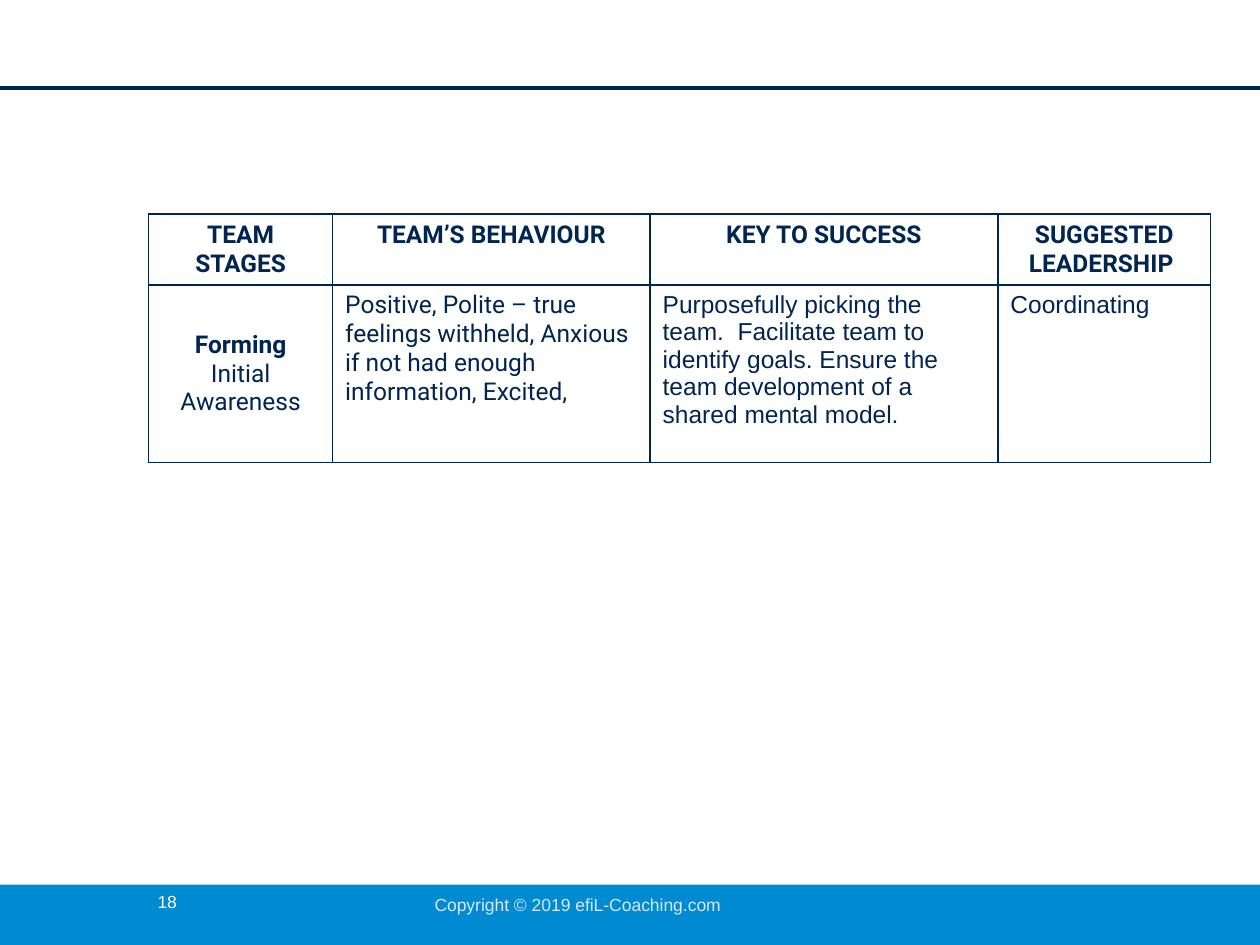
from lxml import etree
from pptx import Presentation
from pptx.dml.color import RGBColor
from pptx.enum import shapes, text
from pptx.oxml import ns
from pptx.util import Inches, Pt

COLORS = {"navy": "002551", "blue": "008BD0", "pale": "D4E8FF", "white": "FFFFFF"}
HEADS = ["TEAM STAGES", "TEAM’S BEHAVIOUR", "KEY TO SUCCESS", "SUGGESTED LEADERSHIP "]
STAGE = [("Forming", True), ("Initial Awareness", False)]
TRAITS = ("Positive, Polite – true feelings withheld, Anxious if not had enough "
          "information, Excited,")
KEYS = ("Purposefully picking the team.  Facilitate team to identify goals. "
        "Ensure the team development of a shared mental model.")
WIDTHS = [1.46, 2.52, 2.76, 1.69]
HEIGHTS = [0.56, 1.41]


def rgb(name):
    return RGBColor.from_string(COLORS[name])


def add_run(para, words, size, color, face="Arial", bold=False):
    run = para.add_run()
    run.text = words
    font = run.font
    font.size, font.name, font.bold = Pt(size), face, bold
    font.color.rgb = rgb(color)


def add_band(slide):
    band = slide.shapes.add_shape(shapes.MSO_SHAPE.RECTANGLE, Inches(0), Inches(7.02),
                                  Inches(10), Inches(0.48))
    band.shadow.inherit = False
    band.fill.solid()
    band.fill.fore_color.rgb = rgb("blue")
    band.line.fill.background()


def add_rule(slide):
    rule = slide.shapes.add_connector(shapes.MSO_CONNECTOR.STRAIGHT, Inches(0), Inches(0.7),
                                      Inches(10), Inches(0.7))
    rule.line.color.rgb = rgb("navy")
    rule.line.width = Pt(2.5)
    etree.SubElement(rule._element.spPr, ns.qn("a:effectLst"))


def add_label(slide, words, box, color, pad, wrap):
    label = slide.shapes.add_textbox(*map(Inches, box))
    frame = label.text_frame
    frame.word_wrap = wrap
    frame.margin_left = frame.margin_right = Inches(pad)
    frame.margin_top = frame.margin_bottom = Inches(0.05)
    add_run(frame.paragraphs[0], words, 10, color)


def set_edges(cell):
    """Draw a thin navy border on all four sides."""
    props = cell._tc.get_or_add_tcPr()
    for spot, side in enumerate(("lnL", "lnR", "lnT", "lnB")):
        edge = etree.Element(ns.qn("a:" + side), w=str(Pt(1)))
        fill = etree.SubElement(edge, ns.qn("a:solidFill"))
        etree.SubElement(fill, ns.qn("a:srgbClr"), val=COLORS["navy"])
        props.insert(spot, edge)


def fill_cell(cell, lines, face="Roboto", center=False):
    """Write one paragraph for each (words, bold) pair."""
    cell.fill.background()
    set_edges(cell)
    frame = cell.text_frame
    for spot, (words, bold) in enumerate(lines):
        para = frame.paragraphs[0] if spot == 0 else frame.add_paragraph()
        para.alignment = text.PP_ALIGN.CENTER if center else text.PP_ALIGN.LEFT
        add_run(para, words, 14, "navy", face, bold)


def add_stages(slide):
    frame = slide.shapes.add_table(len(HEIGHTS), len(WIDTHS), Inches(1.18), Inches(1.7),
                                   Inches(sum(WIDTHS)), Inches(sum(HEIGHTS)))
    table = frame.table
    table.first_row = table.horz_banding = False
    for col, width in zip(table.columns, WIDTHS):
        col.width = Inches(width)
    for row, height in zip(table.rows, HEIGHTS):
        row.height = Inches(height)
    for spot, head in enumerate(HEADS):
        fill_cell(table.cell(0, spot), [(head, True)], center=True)
    fill_cell(table.cell(1, 0), STAGE, center=True)
    table.cell(1, 0).vertical_anchor = text.MSO_ANCHOR.MIDDLE
    fill_cell(table.cell(1, 1), [(TRAITS, False)])
    fill_cell(table.cell(1, 2), [(KEYS, False)], face="Arial")
    fill_cell(table.cell(1, 3), [("Coordinating", False)], face="Arial")


def main():
    deck = Presentation()
    deck.slide_width, deck.slide_height = Inches(10), Inches(7.5)
    slide = deck.slides.add_slide(deck.slide_layouts[6])
    add_band(slide)
    add_rule(slide)
    add_stages(slide)
    add_label(slide, "18", (1.2, 7.02, 0.51, 0.35), "white", 0.05, True)
    add_label(slide, "Copyright © 2019 efiL-Coaching.com", (3.35, 7.05, 2.49, 0.27),
              "pale", 0.1, False)
    deck.save("out.pptx")


if __name__ == "__main__":
    main()
